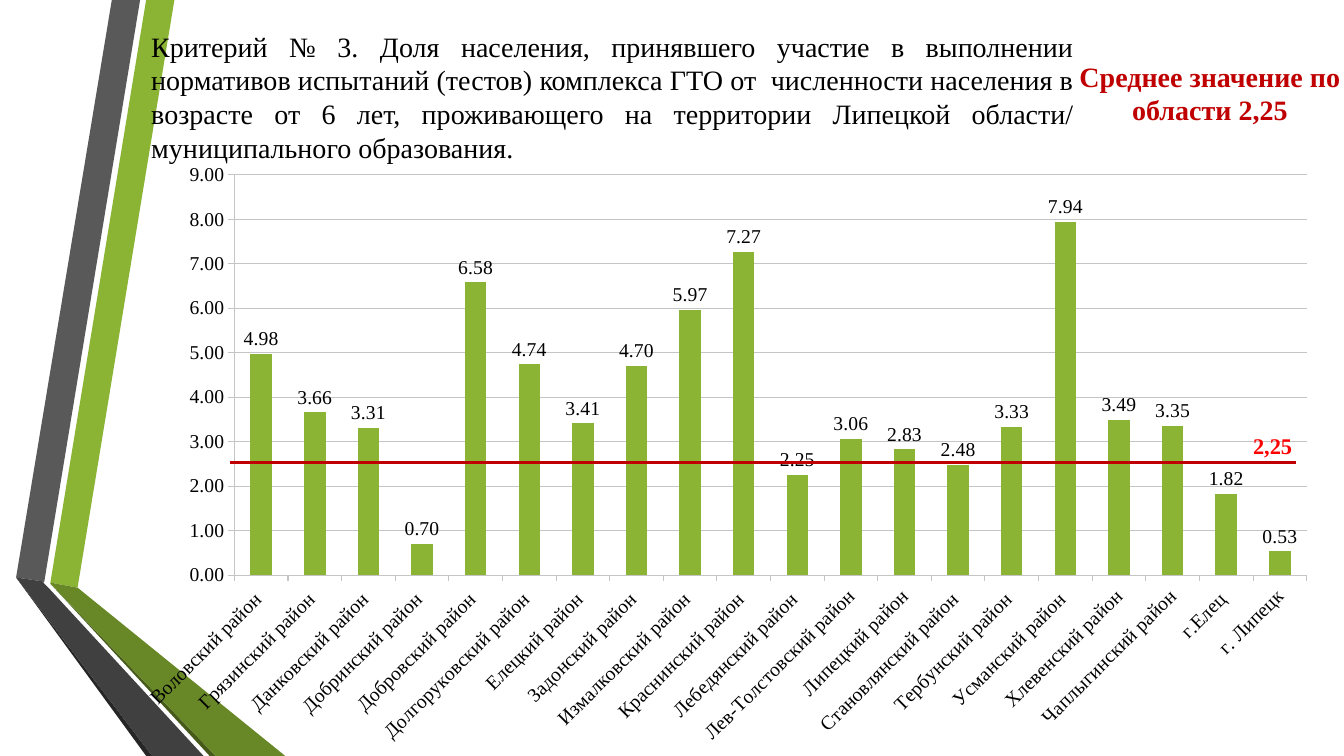
from dataclasses import dataclass

from lxml import etree
from pptx import Presentation
from pptx.chart.data import CategoryChartData
from pptx.dml.color import RGBColor
from pptx.enum.chart import XL_CHART_TYPE, XL_LABEL_POSITION, XL_TICK_MARK
from pptx.enum.shapes import MSO_CONNECTOR
from pptx.enum.text import MSO_ANCHOR, MSO_AUTO_SIZE, PP_ALIGN
from pptx.oxml.ns import qn
from pptx.util import Inches, Pt

COLUMNS = XL_CHART_TYPE.COLUMN_CLUSTERED
OUTSIDE_END = XL_LABEL_POSITION.OUTSIDE_END
TICK_OUTSIDE = XL_TICK_MARK.OUTSIDE
STRAIGHT = MSO_CONNECTOR.STRAIGHT
TOP = MSO_ANCHOR.TOP
NO_AUTOFIT = MSO_AUTO_SIZE.NONE
LEFT, CENTER, JUSTIFY = PP_ALIGN.LEFT, PP_ALIGN.CENTER, PP_ALIGN.JUSTIFY


@dataclass(frozen=True)
class Theme:
    font: str = "Times New Roman"
    text: str = "000000"
    average: str = "C00000"
    average_value: str = "FF0000"
    column: str = "8BB434"
    grid: str = "C5C5C5"
    heading_size: int = 20
    value_size: int = 16
    chart_size: int = 14


THEME = Theme()

RIBBONS = [
    ("8BB434", [(0.5, 5.78), (0.77, 5.83), (1.73, 0), (1.45, 0)]),
    ("595959", [(1.39, 0), (1.11, 0), (0.16, 5.73), (0.44, 5.77)]),
    ("262626", [(0.16, 5.73), (1.45, 7.5), (1.51, 7.5)]),
    ("465A1A", [(0.5, 5.79), (2.08, 7.5), (2.14, 7.5)]),
    ("688727", [(0.5, 5.78), (0.5, 5.79), (2.14, 7.5), (2.83, 7.5), (0.77, 5.83)]),
    ("404040", [(2.02, 7.5), (0.48, 5.83), (0.43, 5.78), (0.44, 5.77),
                (0.16, 5.73), (1.51, 7.5)]),
]

HEADING = (
    "Критерий № 3. Доля населения, принявшего участие в выполнении нормативов "
    "испытаний (тестов) комплекса ГТО от  численности населения в возрасте от 6 лет, "
    "проживающего на территории Липецкой области/ муниципального образования."
)

PARTICIPATION = {
    "Воловский район ": 4.98,
    "Грязинский район ": 3.66,
    "Данковский район ": 3.31,
    "Добринский район ": 0.70,
    "Добровский район ": 6.58,
    "Долгоруковский район ": 4.74,
    "Елецкий район ": 3.41,
    "Задонский район ": 4.70,
    "Измалковский район ": 5.97,
    "Краснинский район ": 7.27,
    "Лебедянский район ": 2.25,
    "Лев-Толстовский район": 3.06,
    "Липецкий район": 2.83,
    "Становлянский район ": 2.48,
    "Тербунский район ": 3.33,
    "Усманский район ": 7.94,
    "Хлевенский район": 3.49,
    "Чаплыгинский район": 3.35,
    "г.Елец ": 1.82,
    "г. Липецк": 0.53,
}


def rgb(color):
    return RGBColor.from_string(color)


def style_font(font, size, color, bold=False):
    font.name = THEME.font
    font.size = Pt(size)
    font.bold = bold
    font.color.rgb = rgb(color)


def style_line(line, color, width):
    line.color.rgb = rgb(color)
    line.width = Pt(width)


def add_ribbon(slide, color, points):
    corners = [(Inches(x), Inches(y)) for x, y in points]
    builder = slide.shapes.build_freeform(*corners[0])
    builder.add_line_segments(corners[1:], close=True)
    shape = builder.convert_to_shape()
    shape.shadow.inherit = False
    shape.fill.solid()
    shape.fill.fore_color.rgb = rgb(color)
    shape.line.fill.background()


def fill_text(shape, text, size, color, alignment, bold=False):
    frame = shape.text_frame
    frame.word_wrap = True
    frame.auto_size = NO_AUTOFIT
    frame.vertical_anchor = TOP
    frame.text = text
    paragraph = frame.paragraphs[0]
    paragraph.alignment = alignment
    paragraph.line_spacing = 1.0
    paragraph.space_before = Pt(0)
    style_font(paragraph.font, size, color, bold)


def place_title(slide):
    title = slide.shapes.title
    title.left, title.top = Inches(1.4), Inches(0.24)
    title.width, title.height = Inches(9.35), Inches(1.45)
    fill_text(title, HEADING, THEME.heading_size, THEME.text, JUSTIFY)


def add_label(slide, text, box, size, color, alignment):
    label = slide.shapes.add_textbox(*map(Inches, box))
    fill_text(label, text, size, color, alignment, bold=True)


def set_plot_layout(chart, **fractions):
    """Fix the inner plot area as fractions of the chart frame."""
    plot_area = chart.plots[0]._element.getparent()
    layout = plot_area.find(qn("c:layout"))
    if layout is None:
        layout = etree.Element(qn("c:layout"))
        plot_area.insert(0, layout)
    manual = etree.SubElement(layout, qn("c:manualLayout"))
    settings = {"layoutTarget": "inner", "xMode": "edge", "yMode": "edge", **fractions}
    for name, value in settings.items():
        etree.SubElement(manual, qn(f"c:{name}")).set("val", str(value))


def style_axis(axis):
    axis.major_tick_mark = TICK_OUTSIDE
    style_font(axis.tick_labels.font, THEME.chart_size, THEME.text)
    style_line(axis.format.line, THEME.grid, 0.75)


def add_participation_chart(slide):
    data = CategoryChartData(number_format="0.00")
    data.categories = PARTICIPATION.keys()
    data.add_series("Series 1", PARTICIPATION.values())
    frame = slide.shapes.add_chart(
        COLUMNS, Inches(1.21), Inches(1.5), Inches(11.99), Inches(6), data)
    chart = frame.chart
    chart.has_legend = False
    chart.has_title = False
    style_font(chart.font, THEME.chart_size, THEME.text)
    set_plot_layout(chart, x=0.093, y=0.039, w=0.887, h=0.662)

    category_axis, value_axis = chart.category_axis, chart.value_axis
    style_axis(category_axis)
    category_text = category_axis._element.find(qn("c:txPr"))
    category_text.find(qn("a:bodyPr")).set("rot", "-2700000")
    style_axis(value_axis)
    value_axis.minimum_scale, value_axis.maximum_scale = 0, 9
    value_axis.major_unit = 1
    value_axis.tick_labels.number_format = "0.00"
    value_axis.tick_labels.number_format_is_linked = False
    style_line(value_axis.major_gridlines.format.line, THEME.grid, 0.75)

    plot = chart.plots[0]
    plot.gap_width = 150
    plot.vary_by_categories = False
    fill = plot.series[0].format.fill
    fill.solid()
    fill.fore_color.rgb = rgb(THEME.column)
    plot.has_data_labels = True
    labels = plot.data_labels
    labels.show_value = True
    labels.position = OUTSIDE_END
    labels.number_format = "0.00"
    labels.number_format_is_linked = False
    style_font(labels.font, THEME.chart_size, THEME.text)


def add_average_line(slide):
    height = Inches(4.59)
    line = slide.shapes.add_connector(
        STRAIGHT, Inches(2.28), height, Inches(12.85), height)
    style_line(line.line, THEME.average, 1.75)
    etree.SubElement(line._element.spPr, qn("a:effectLst"))


def main():
    presentation = Presentation()
    presentation.slide_width, presentation.slide_height = Inches(13.33), Inches(7.5)
    slide = presentation.slides.add_slide(presentation.slide_layouts[5])
    place_title(slide)
    for color, points in RIBBONS:
        add_ribbon(slide, color, points)
    # The heading overlaps the ribbons, so it goes in front of them.
    slide.shapes._spTree.append(slide.shapes.title._element)
    add_label(slide, "Среднее значение по области 2,25", (10.56, 0.54, 2.88, 0.77),
              THEME.heading_size, THEME.average, CENTER)
    add_participation_chart(slide)
    add_average_line(slide)
    add_label(slide, "2,25", (12.33, 4.24, 0.69, 0.52),
              THEME.value_size, THEME.average_value, LEFT)
    presentation.save("out.pptx")


if __name__ == "__main__":
    main()
